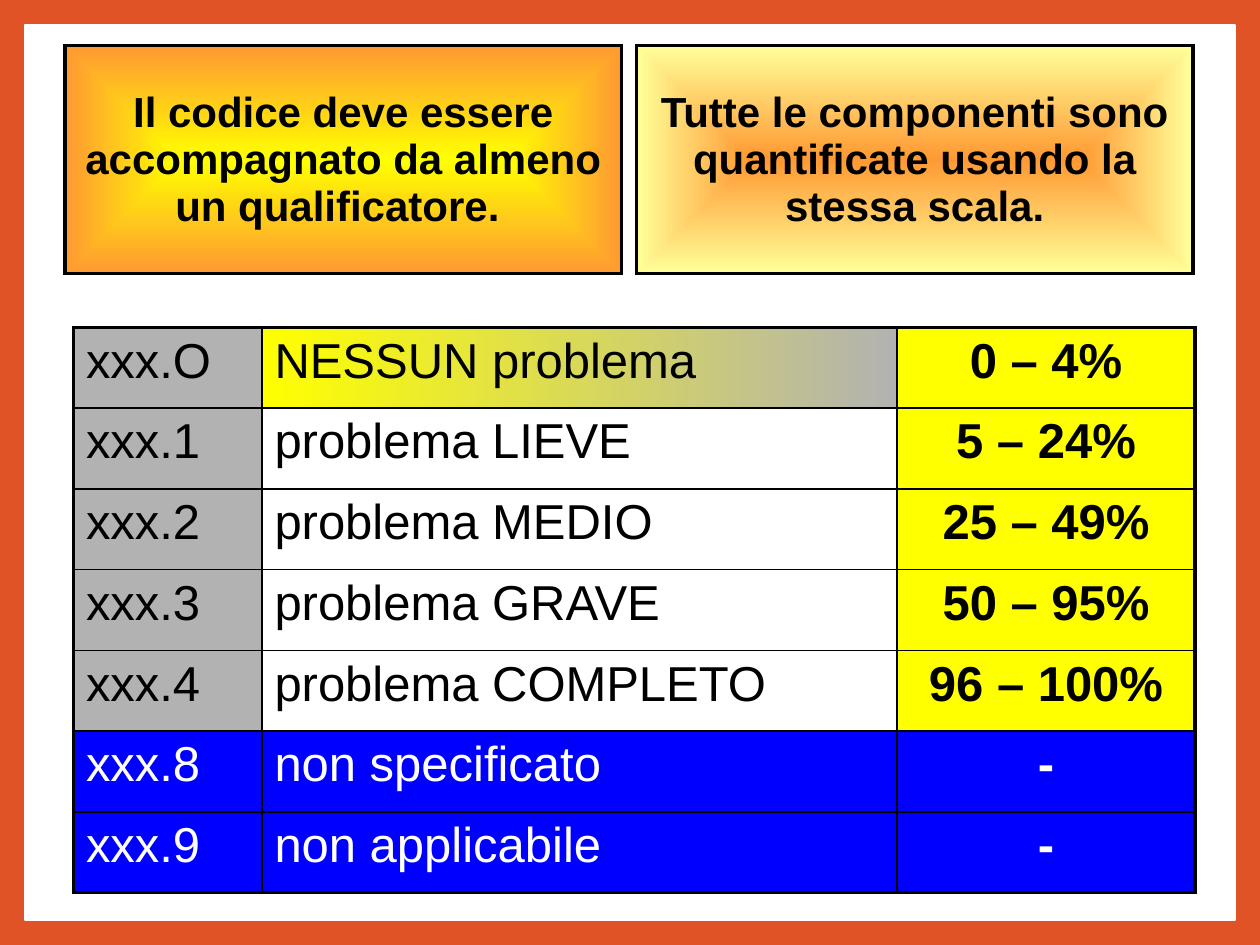
from pptx import Presentation
from pptx.dml.color import RGBColor
from pptx.enum.shapes import MSO_SHAPE
from pptx.enum.text import MSO_ANCHOR, PP_ALIGN
from pptx.oxml import parse_xml
from pptx.oxml.ns import nsdecls, qn
from pptx.util import Cm, Pt

BLACK, WHITE, YELLOW = "000000", "FFFFFF", "FFFF00"
GREY, BLUE, ORANGE, CREAM = "B2B2B2", "0000FF", "FF9933", "FFFF99"
THICK, THIN = 2.25, 1

SCALE = [
    ("xxx.O", "NESSUN problema", "0 – 4%"),
    ("xxx.1", "problema LIEVE", "5 – 24%"),
    ("xxx.2", "problema MEDIO", "25 – 49%"),
    ("xxx.3", "problema GRAVE", "50 – 95%"),
    ("xxx.4", "problema COMPLETO", "96 – 100%"),
    ("xxx.8", "non specificato", "-"),
    ("xxx.9", "non applicabile", "-"),
]


def rgb(color):
    """Turn a hex string into a colour."""
    return RGBColor.from_string(color)


def fill_solid(fill, color):
    """Fill with one colour."""
    fill.solid()
    fill.fore_color.rgb = rgb(color)


def fill_gradient(cell, start, end, from_center=False):
    """Fill a cell with two colours, left to right or from its centre."""
    cell.fill.gradient()
    cell.fill.gradient_angle = 0
    for stop, color in zip(cell.fill.gradient_stops, (start, end)):
        stop.color.rgb = rgb(color)
    if from_center:
        grad = cell._tc.tcPr.find(qn("a:gradFill"))
        grad.replace(grad.find(qn("a:lin")), parse_xml(
            f'<a:path {nsdecls("a")} path="shape">'
            '<a:fillToRect l="50000" t="50000" r="50000" b="50000"/></a:path>'))


def set_borders(cell, left, right, top, bottom):
    """Draw the four black borders of a cell with widths in points."""
    for i, (side, width) in enumerate(zip("LRTB", (left, right, top, bottom))):
        cell._tc.tcPr.insert(i, parse_xml(
            f'<a:ln{side} {nsdecls("a")} w="{Pt(width)}"><a:solidFill>'
            f'<a:srgbClr val="{BLACK}"/></a:solidFill></a:ln{side}>'))


def set_text(cell, text, size, color=BLACK, bold=False, align=PP_ALIGN.LEFT):
    """Write one formatted paragraph into a cell."""
    p = cell.text_frame.paragraphs[0]
    p.text = text
    p.alignment = align
    p._p.get_or_add_pPr().insert(0, parse_xml(
        f'<a:spcBef {nsdecls("a")}><a:spcPct val="20000"/></a:spcBef>'))
    font = p.runs[0].font
    font.name, font.size, font.bold = "Arial", Pt(size), bold
    font.color.rgb = rgb(color)


def add_table(slide, left, top, widths, height, rows):
    """Add an unstyled table with equal rows."""
    frame = slide.shapes.add_table(
        rows, len(widths), Cm(left), Cm(top), Cm(sum(widths)), Cm(height))
    table = frame.table
    table.first_row = table.horz_banding = False
    for column, width in zip(table.columns, widths):
        column.width = Cm(width)
    return table


def add_frame(slide):
    """Add the white page on the coloured background."""
    fill_solid(slide.background.fill, "DF5327")
    sp = slide.shapes.add_shape(
        MSO_SHAPE.RECTANGLE, Cm(0.5), Cm(0.5), Cm(24.4), Cm(18.05))
    sp.shadow.inherit = False
    fill_solid(sp.fill, WHITE)
    sp.line.color.rgb = rgb(WHITE)
    sp.line.width = Pt(1)


def add_statement(slide, left, text, inner, outer):
    """Add a one-cell table holding a statement."""
    cell = add_table(slide, left, 0.92, [11.22], 4.6, 1).cell(0, 0)
    cell.vertical_anchor = MSO_ANCHOR.MIDDLE
    fill_gradient(cell, inner, outer, from_center=True)
    set_borders(cell, THICK, THICK, THICK, THICK)
    set_text(cell, text, 24, bold=True, align=PP_ALIGN.CENTER)


def add_scale(slide):
    """Add the table of qualifiers with their percentages."""
    table = add_table(slide, 1.48, 6.6, [3.8, 12.8, 6.01], 11.4, len(SCALE))
    last_row, last_col = len(SCALE) - 1, 2
    for i, row in enumerate(SCALE):
        unrated = row[2] == "-"
        fills = [BLUE] * 3 if unrated else [GREY, WHITE, YELLOW]
        for j, text in enumerate(row):
            cell = table.cell(i, j)
            if (i, j) == (0, 1):
                fill_gradient(cell, YELLOW, GREY)
            else:
                fill_solid(cell.fill, fills[j])
            set_borders(cell, *(THICK if edge else THIN for edge in (
                j == 0, j == last_col, i == 0, i == last_row)))
            set_text(cell, text, 28, WHITE if unrated else BLACK, j == last_col,
                     PP_ALIGN.CENTER if j == last_col else PP_ALIGN.LEFT)


def main():
    """Build the slide and save it."""
    prs = Presentation()
    prs.slide_width, prs.slide_height = Cm(25.4), Cm(19.05)
    slide = prs.slides.add_slide(prs.slide_layouts[6])
    add_frame(slide)
    add_statement(
        slide, 1.31, "Il codice deve essere accompagnato da almeno un qualificatore. ",
        YELLOW, ORANGE)
    add_statement(
        slide, 12.83, "Tutte le componenti sono quantificate usando la stessa scala.",
        ORANGE, CREAM)
    add_scale(slide)
    prs.save("out.pptx")


if __name__ == "__main__":
    main()
